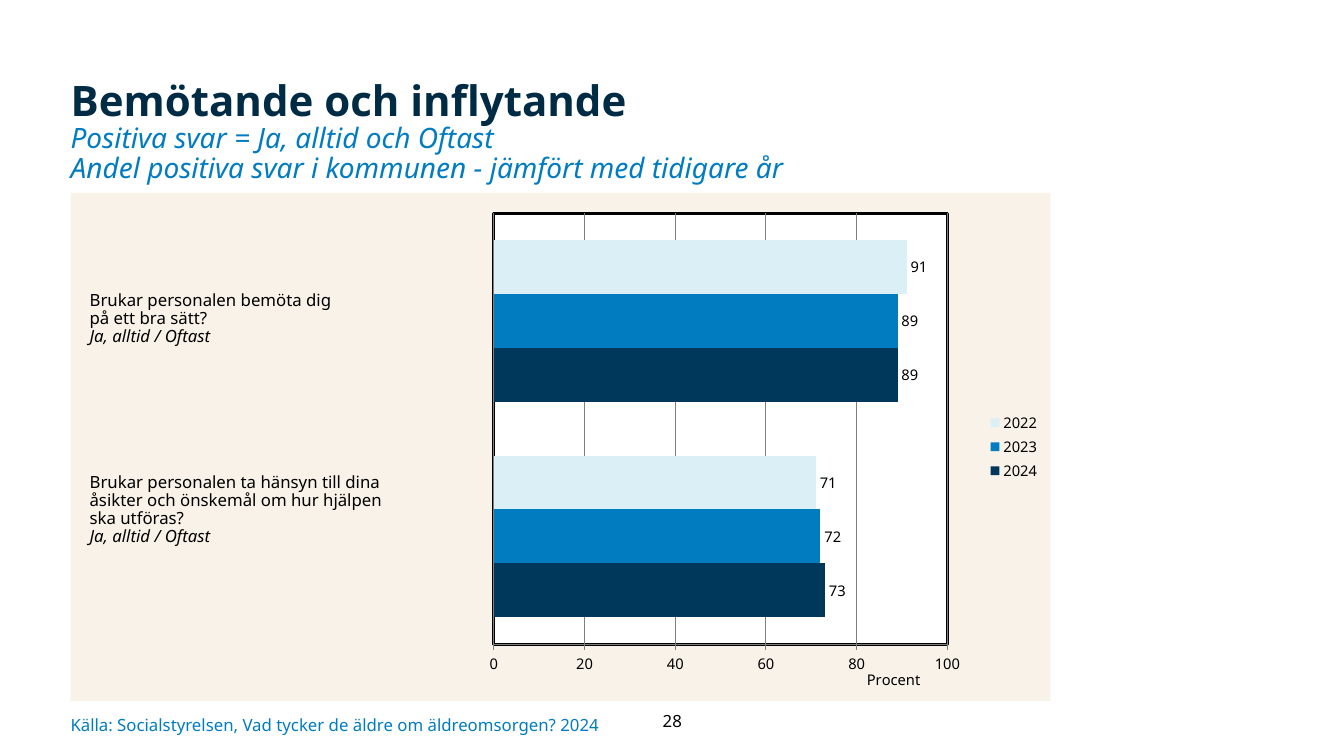
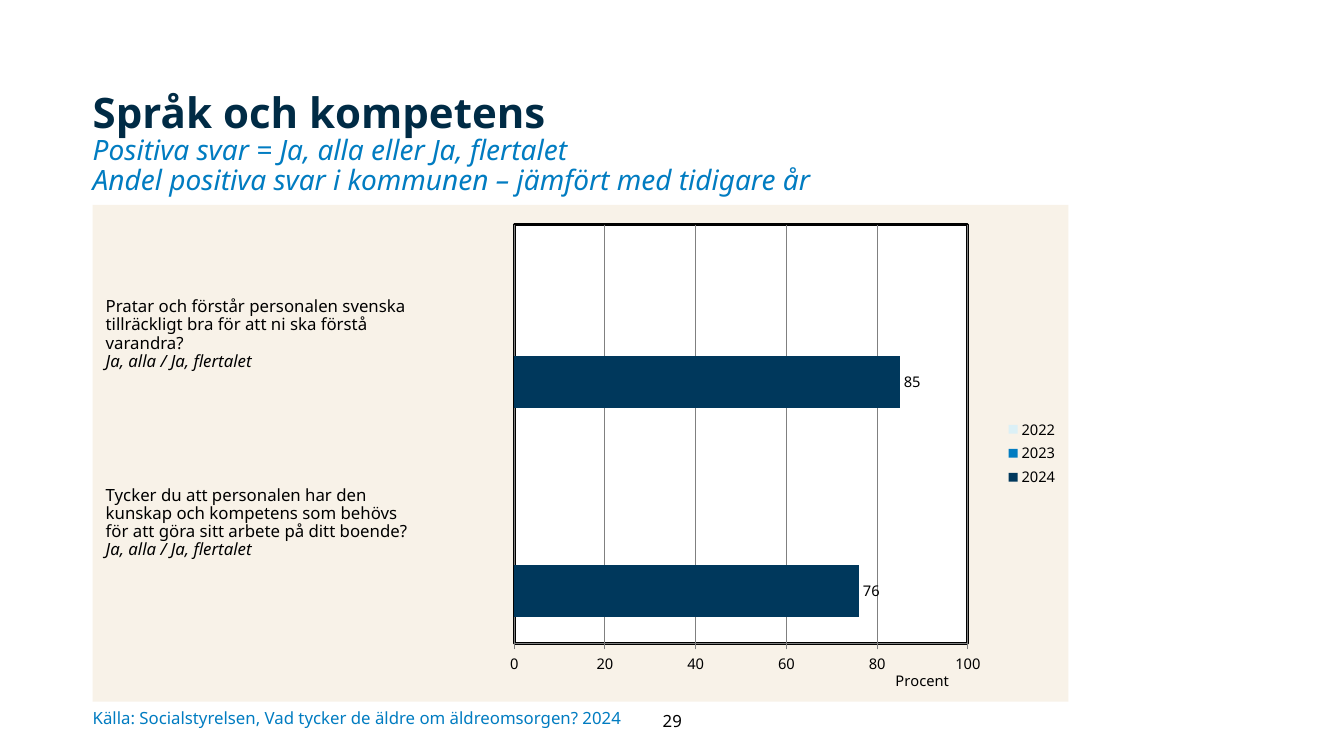
from lxml import etree
from pptx import Presentation
from pptx.chart.data import CategoryChartData
from pptx.dml.color import RGBColor
from pptx.enum.chart import (XL_CHART_TYPE, XL_LABEL_POSITION, XL_LEGEND_POSITION,
                             XL_TICK_MARK)
from pptx.enum.text import MSO_ANCHOR, PP_ALIGN
from pptx.oxml.ns import qn
from pptx.util import Inches, Pt

BAR_CLUSTERED = XL_CHART_TYPE.BAR_CLUSTERED
OUTSIDE_END = XL_LABEL_POSITION.OUTSIDE_END
LEGEND_RIGHT = XL_LEGEND_POSITION.RIGHT
TICK_OUT, TICK_NONE = XL_TICK_MARK.OUTSIDE, XL_TICK_MARK.NONE
TOP, MIDDLE = MSO_ANCHOR.TOP, MSO_ANCHOR.MIDDLE
LEFT, CENTER = PP_ALIGN.LEFT, PP_ALIGN.CENTER

SLIDE_W, SLIDE_H = Inches(13.33), Inches(7.5)
FONT = "Noto Sans"
NAVY, BLUE, BLACK, WHITE = "002B45", "017CC1", "000000", "FFFFFF"
SAND, GRID_GRAY = "F8F2E8", "808080"
YEAR_COLORS = {"2024": "00385C", "2023": BLUE, "2022": "DBF0F6"}
CHART_SIZE = 10.5
INSET = (0.1, 0.05, 0.1, 0.05)
NO_INSET = (0, 0, 0, 0)
SOURCE = "Källa: Socialstyrelsen, Vad tycker de äldre om äldreomsorgen? 2024"

# Positions and sizes are percent of the slide's width and height.
PAGES = [
    {
        "number": "28",
        "origin": (5.25, 9.2),
        "title": "Bemötande och inflytande",
        "subtitle": ["Positiva svar = Ja, alltid och Oftast",
                     "Andel positiva svar i kommunen - jämfört med tidigare år"],
        "chart_size": (72.9, 67.2),
        "plot": (0.432, 0.04, 0.463, 0.849),
        "unit_at": (0.81, 0.93),
        "values": {"2024": (73, 89), "2023": (72, 89), "2022": (71, 91)},
        "question_left": 5.93,
        "answer": "Ja, alltid / Oftast",
        "questions": [
            (38, 9.5, ["Brukar personalen bemöta dig", "på ett bra sätt?"]),
            (62, 12.1, ["Brukar personalen ta hänsyn till dina",
                        "åsikter och önskemål om hur hjälpen", "ska utföras?"]),
        ],
        "source_top": 93.9,
    },
    {
        "number": "29",
        "origin": (6.9, 10.8),
        "title": "Språk och kompetens",
        "subtitle": ["Positiva svar = Ja, alla eller Ja, flertalet",
                     "Andel positiva svar i kommunen – jämfört med tidigare år"],
        "chart_size": (72.6, 65.7),
        "plot": (0.432, 0.04, 0.465, 0.843),
        "unit_at": (0.82, 0.93),
        "values": {"2024": (76, 85), "2023": (None, None), "2022": (None, None)},
        "question_left": 7.13,
        "answer": "Ja, alla / Ja, flertalet",
        "questions": [
            (38.8, 12.1, ["Pratar och förstår personalen svenska tillräckligt bra "
                          "för att ni ska förstå varandra?"]),
            (63.7, 12.1, ["Tycker du att personalen har den kunskap och kompetens "
                          "som behövs för att göra sitt arbete på ditt boende?"]),
        ],
        "source_top": 93,
    },
]


def rgb(color):
    return RGBColor.from_string(color)


def box(left, top, width, height):
    """Turn percent of the slide into lengths."""
    return (int(SLIDE_W * left / 100), int(SLIDE_H * top / 100),
            int(SLIDE_W * width / 100), int(SLIDE_H * height / 100))


def style(font, size, color=BLACK, bold=False, italic=False):
    font.name, font.size = FONT, Pt(size)
    font.bold, font.italic = bold, italic
    font.color.rgb = rgb(color)


def set_frame(frame, inset, anchor):
    frame.word_wrap = True
    frame.vertical_anchor = anchor
    (frame.margin_left, frame.margin_top,
     frame.margin_right, frame.margin_bottom) = map(Inches, inset)


def write_lines(paragraph, lines, size, align=LEFT, spacing=1.0, **look):
    paragraph.alignment = align
    paragraph.line_spacing = spacing
    for index, line in enumerate(lines):
        if index:
            paragraph.add_line_break()
        run = paragraph.add_run()
        run.text = line
        style(run.font, size, **look)


def add_text(slide, place, lines, size, inset=NO_INSET, anchor=TOP, **look):
    frame = slide.shapes.add_textbox(*box(*place)).text_frame
    set_frame(frame, inset, anchor)
    write_lines(frame.paragraphs[0], lines, size, **look)
    return frame


def add_title(slide, place, text):
    title = slide.shapes.title
    title.left, title.top, title.width, title.height = box(*place)
    set_frame(title.text_frame, (0, 0, 0.1, 0.05), TOP)
    write_lines(title.text_frame.paragraphs[0], [text], 30, spacing=1.1,
                color=NAVY, bold=True)


def add_question(slide, place, question, answer):
    frame = add_text(slide, place, question, 12, inset=INSET, spacing=0.9)
    write_lines(frame.add_paragraph(), [answer], 12, spacing=0.9, italic=True)


def set_layout(parent, index, **settings):
    """Give a chart part a manual layout as its child number index."""
    for old in parent.findall(qn("c:layout")):
        parent.remove(old)
    layout = etree.Element(qn("c:layout"))
    manual = etree.SubElement(layout, qn("c:manualLayout"))
    for name, value in settings.items():
        etree.SubElement(manual, qn(f"c:{name}")).set("val", str(value))
    parent.insert(index, layout)


def area_format(fill, line=None, width=0):
    """Build the fill and outline of a chart area."""
    properties = etree.Element(qn("c:spPr"))

    def add_fill(parent, color):
        solid = etree.SubElement(parent, qn("a:solidFill"))
        etree.SubElement(solid, qn("a:srgbClr")).set("val", color)

    add_fill(properties, fill)
    outline = etree.SubElement(properties, qn("a:ln"))
    if line:
        outline.set("w", str(Pt(width)))
        add_fill(outline, line)
    else:
        etree.SubElement(outline, qn("a:noFill"))
    return properties


def format_areas(chart, plot):
    chart_node = chart._chartSpace.find(qn("c:chart"))
    chart_node.addnext(area_format(SAND))
    plot_area = chart_node.find(qn("c:plotArea"))
    left, top, width, height = plot
    set_layout(plot_area, 0, layoutTarget="inner", xMode="edge", yMode="edge",
               x=left, y=top, w=width, h=height)
    plot_area.append(area_format(WHITE, BLACK, 2.25))


def format_value_axis(axis, unit_at):
    axis.minimum_scale, axis.maximum_scale, axis.major_unit = 0, 100, 20
    axis.major_tick_mark, axis.minor_tick_mark = TICK_OUT, TICK_NONE
    axis.has_major_gridlines = True
    for line in (axis.major_gridlines.format.line, axis.format.line):
        line.color.rgb = rgb(GRID_GRAY)
        line.width = Pt(0.75)
    style(axis.tick_labels.font, CHART_SIZE)
    unit = axis.axis_title
    run = unit.text_frame.paragraphs[0].add_run()
    run.text = "Procent"
    style(run.font, CHART_SIZE)
    set_layout(unit._element, 1, xMode="edge", yMode="edge",
               x=unit_at[0], y=unit_at[1])


def add_year_chart(slide, place, values, plot, unit_at):
    data = CategoryChartData()
    data.categories = ["1", "2"]
    for year, shares in values.items():
        data.add_series(year, shares)
    chart = slide.shapes.add_chart(BAR_CLUSTERED, *box(*place), data).chart
    chart.has_title = False
    style(chart.font, 10)
    chart.has_legend = True
    chart.legend.position = LEGEND_RIGHT
    chart.legend.include_in_layout = False
    style(chart.legend.font, CHART_SIZE)
    chart.category_axis.visible = False
    format_value_axis(chart.value_axis, unit_at)

    bars = chart.plots[0]
    bars.gap_width, bars.overlap, bars.vary_by_categories = 100, 0, False
    for series in bars.series:
        series.format.fill.solid()
        series.format.fill.fore_color.rgb = rgb(YEAR_COLORS[series.name])
        labels = series.data_labels
        labels.show_value = True
        labels.position = OUTSIDE_END
        style(labels.font, CHART_SIZE)
    format_areas(chart, plot)


def build_page(prs, page):
    slide = prs.slides.add_slide(prs.slide_layouts[5])
    left, top = page["origin"]
    add_title(slide, (left, top, 62.7, 7.2), page["title"])
    add_text(slide, (left, top + 7.2, 62.7, 8.1), page["subtitle"], 20,
             spacing=0.9, color=BLUE, italic=True)
    add_year_chart(slide, (left, top + 16.3, *page["chart_size"]),
                   page["values"], page["plot"], page["unit_at"])
    for question_top, height, question in page["questions"]:
        add_question(slide, (page["question_left"], question_top, 24.3, height),
                     question, page["answer"])
    add_text(slide, (left, page["source_top"], 44, 4), [SOURCE], 12,
             anchor=MIDDLE, color=BLUE)
    add_text(slide, (46.2, 92.7, 7.65, 5.3), [page["number"]], 12,
             inset=INSET, anchor=MIDDLE, align=CENTER)


def main():
    prs = Presentation()
    prs.slide_width, prs.slide_height = SLIDE_W, SLIDE_H
    for page in PAGES:
        build_page(prs, page)
    prs.save("out.pptx")


if __name__ == "__main__":
    main()
